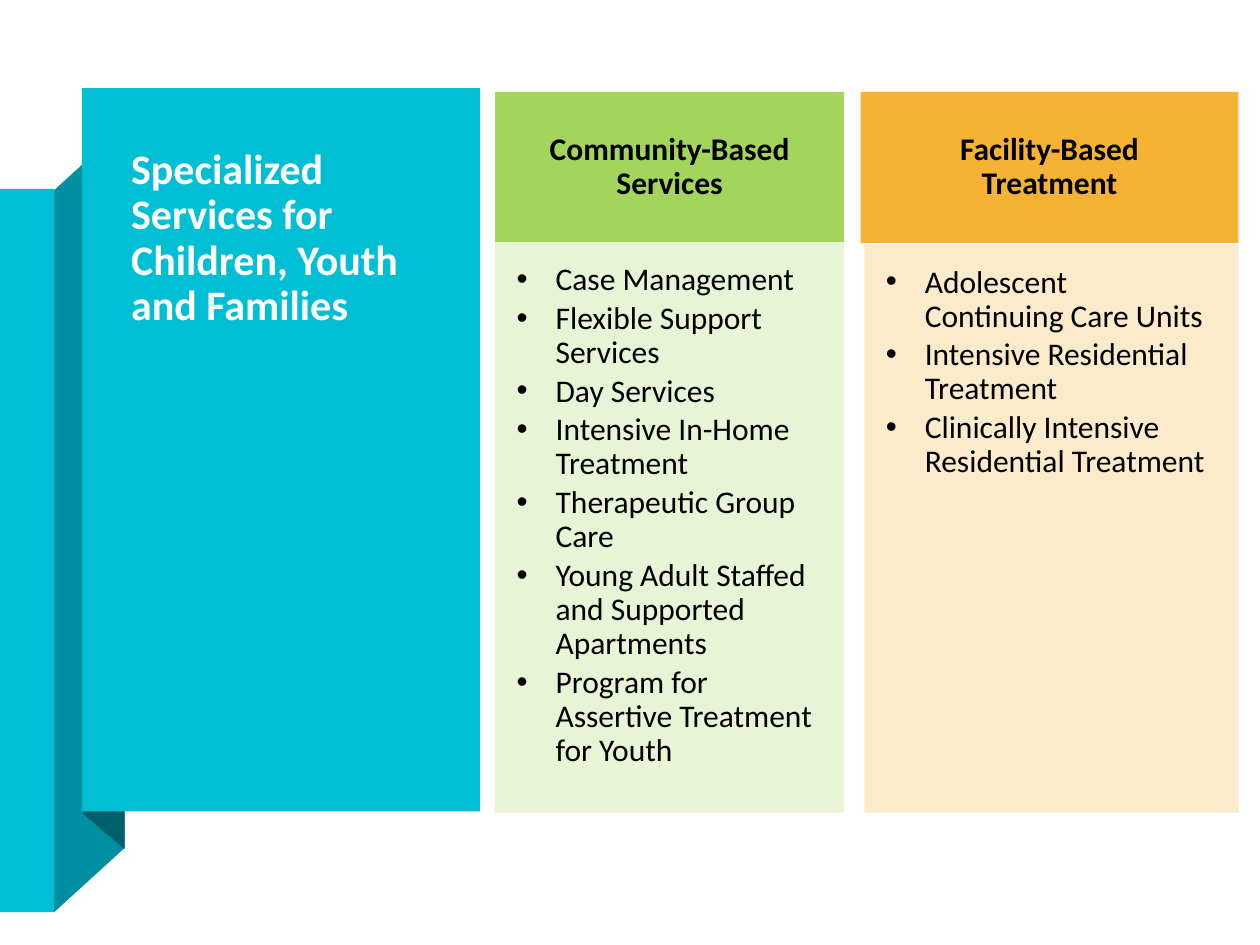
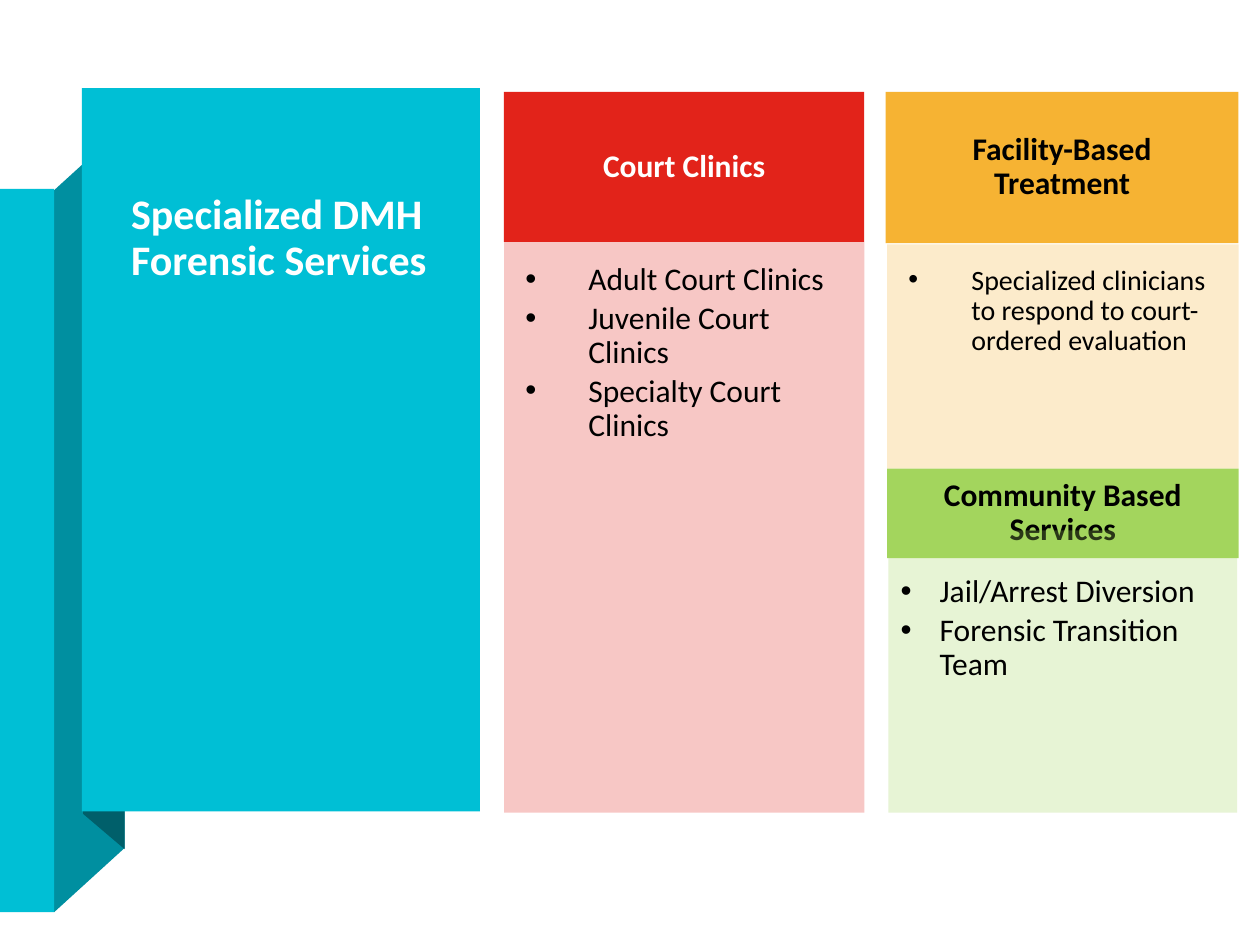
from dataclasses import dataclass
from typing import NamedTuple

from lxml.etree import SubElement
from pptx import Presentation
from pptx.dml.color import RGBColor as RGB
from pptx.enum.shapes import MSO_SHAPE as Shape
from pptx.enum.text import MSO_ANCHOR as Anchor, MSO_AUTO_SIZE as AutoSize, PP_ALIGN as Align
from pptx.oxml.ns import qn
from pptx.util import Inches, Pt

COLORS = {
    "teal": "00BFD5", "fold": "008FA0", "shade": "005F6A",
    "green": "A3D55D", "amber": "F6B333", "red": "E2231A",
    "white": "FFFFFF", "black": "000000",
}
FONT = "Calibri"
COLS, ROWS = 100, 75  # square grid cells of a tenth of an inch
TWO_CONTENT = 3


class Box(NamedTuple):
    left: float
    top: float
    right: float
    bottom: float


class Insets(NamedTuple):
    left: float = 1
    top: float = 0.5
    right: float = 1
    bottom: float = 0.5


HEAD_INSETS = Insets(2.3, 1.3, 2.3, 1.3)
LIST_INSETS = Insets(1.7, 1.7, 2.3, 2.5)


@dataclass
class Panel:
    heading: str
    items: list[str]
    color: str
    head: Box
    body: Box
    head_ink: str = "black"
    indent: float = 3.1
    size: int = 18
    insets: Insets = LIST_INSETS
    tint: int = 25


@dataclass
class ServiceSlide:
    title: str
    panels: list[Panel]


TITLE_BOX = Box(9.4, 10.9, 35.5, 27)
RIBBON_RECTS = {"tail": Box(0, 15, 4.3, 72.4), "front": Box(6.5, 7, 38.1, 64.4)}
FOLD = [(4.3, 72.4), (9.9, 67.3), (9.9, 10), (4.3, 15.1)]
SHADE = [(6.6, 64.6), (9.9, 67.4), (9.9, 9.9), (6.6, 7)]

SLIDES = [
    ServiceSlide("Specialized Services for Children, Youth and Families", [
        Panel("Community-Based Services",
              ["Case Management", "Flexible Support Services", "Day Services",
               "Intensive In-Home Treatment", "Therapeutic Group Care",
               "Young Adult Staffed and Supported Apartments",
               "Program for Assertive Treatment for Youth"],
              "green", Box(39.3, 7.3, 67, 19.2), Box(39.3, 19.2, 67, 64.5)),
        Panel("Facility-Based Treatment",
              ["Adolescent Continuing Care Units ", "Intensive Residential Treatment",
               "Clinically Intensive Residential Treatment"],
              "amber", Box(68.3, 7.3, 98.3, 19.3), Box(68.6, 19.4, 98.3, 64.5)),
    ]),
    ServiceSlide("Specialized DMH Forensic Services", [
        Panel("Court Clinics",
              ["Adult Court Clinics", "Juvenile Court Clinics", "Specialty Court Clinics"],
              "red", Box(40, 7.3, 68.6, 19.2), Box(40, 19.2, 68.6, 64.5),
              head_ink="white", indent=5),
        Panel("Facility-Based Treatment",
              ["Specialized clinicians to respond to court-ordered evaluation"],
              "amber", Box(70.3, 7.3, 98.3, 19.3), Box(70.4, 19.4, 98.3, 37.2),
              indent=5, size=16),
        Panel("Community Based Services",
              ["Jail/Arrest Diversion", "Forensic Transition Team"],
              "green", Box(70.4, 37.2, 98.3, 44.3), Box(70.5, 42.1, 98.2, 64.5),
              insets=Insets(top=3.6), tint=26),
    ]),
]


def cells(n: float) -> int:
    return Inches(round(n / 10, 3))


def place(sp, box: Box) -> None:
    sp.left, sp.top = cells(box.left), cells(box.top)
    sp.width, sp.height = cells(box.right - box.left), cells(box.bottom - box.top)


def paint(sp, color: str, alpha: int = 100) -> None:
    sp.fill.solid()
    sp.fill.fore_color.rgb = RGB.from_string(COLORS[color])
    sp.line.fill.background()
    if alpha < 100:
        clr = sp.element.find(".//" + qn("a:srgbClr"))
        SubElement(clr, qn("a:alpha"), val=str(alpha * 1000))


def add_rect(slide, box: Box, color: str, alpha: int = 100):
    sp = slide.shapes.add_shape(Shape.RECTANGLE, 0, 0, 0, 0)
    sp.shadow.inherit = False
    place(sp, box)
    paint(sp, color, alpha)
    return sp


def add_polygon(slide, points: list[tuple[float, float]], color: str) -> None:
    start, *rest = [(cells(x), cells(y)) for x, y in points]
    builder = slide.shapes.build_freeform(*start)
    builder.add_line_segments(rest, close=True)
    sp = builder.convert_to_shape()
    sp.shadow.inherit = False
    paint(sp, color)


def add_bullet(p, indent: float) -> None:
    pPr = p._p.get_or_add_pPr()
    pPr.set("marL", str(cells(indent)))
    pPr.set("indent", str(-cells(indent)))
    SubElement(pPr, qn("a:buFont"), typeface="Arial")
    SubElement(pPr, qn("a:buChar"), char="•")


def write(sp, lines: list[str], ink: str, size: int, insets: Insets = Insets(),
          anchor=Anchor.MIDDLE, align=Align.LEFT, after: float = 6,
          bold: bool = True, indent: float = 0) -> None:
    """Fill a shape's text frame; a positive indent makes the lines bullets."""
    tf = sp.text_frame
    frame = {"word_wrap": True, "auto_size": AutoSize.NONE, "vertical_anchor": anchor}
    frame |= {f"margin_{side}": cells(n) for side, n in insets._asdict().items()}
    for name, value in frame.items():
        setattr(tf, name, value)
    para = {"alignment": align, "line_spacing": 0.9,
            "space_before": Pt(0), "space_after": Pt(after)}
    font = {"name": FONT, "size": Pt(size), "bold": bold}
    for i, line in enumerate(lines):
        p = tf.add_paragraph() if i else tf.paragraphs[0]
        for name, value in para.items():
            setattr(p, name, value)
        if indent:
            add_bullet(p, indent)
        r = p.add_run()
        r.text = line
        for name, value in font.items():
            setattr(r.font, name, value)
        r.font.color.rgb = RGB.from_string(COLORS[ink])


def add_ribbon(slide, title: str) -> None:
    add_polygon(slide, FOLD, "fold")
    add_rect(slide, RIBBON_RECTS["tail"], "teal")
    add_polygon(slide, SHADE, "shade")
    add_rect(slide, RIBBON_RECTS["front"], "teal")
    sp = slide.shapes.title
    place(sp, TITLE_BOX)
    write(sp, [title], "white", 24)
    slide.shapes.element.append(sp.element)  # bring the title in front of the ribbon


def add_panel(slide, panel: Panel, body=None) -> None:
    """Draw heading and list; the list goes into the body placeholder if one is given."""
    head = add_rect(slide, panel.head, panel.color)
    write(head, [panel.heading], panel.head_ink, 18, HEAD_INSETS, align=Align.CENTER)
    if body is None:
        body = add_rect(slide, panel.body, panel.color, panel.tint)
    else:
        place(body, panel.body)
        paint(body, panel.color, panel.tint)
    write(body, panel.items, "black", panel.size, panel.insets, Anchor.TOP,
          after=0.15 * panel.size, bold=False, indent=panel.indent)


def main() -> None:
    prs = Presentation()
    prs.slide_width, prs.slide_height = cells(COLS), cells(ROWS)
    for content in SLIDES:
        slide = prs.slides.add_slide(prs.slide_layouts[TWO_CONTENT])
        bodies = list(slide.placeholders)[1:]
        add_ribbon(slide, content.title)
        for i, panel in enumerate(content.panels):
            add_panel(slide, panel, bodies[i] if i < len(bodies) else None)
    prs.save("out.pptx")


if __name__ == "__main__":
    main()
